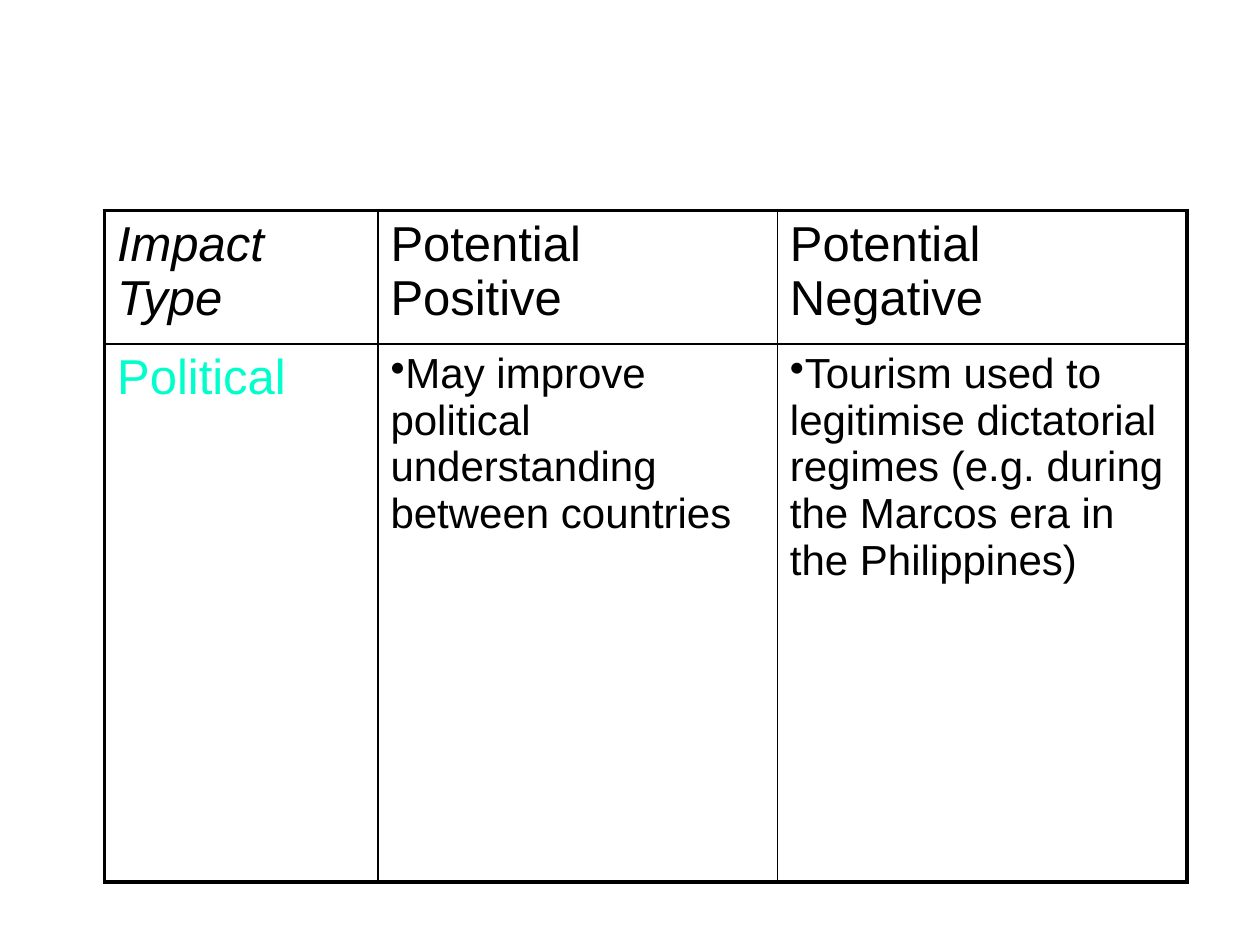
from lxml.etree import SubElement
from pptx import Presentation
from pptx.dml.color import RGBColor
from pptx.oxml.ns import qn
from pptx.util import Inches, Pt

HUES = {"ink": "000000", "aqua": "00FFCC"}
COLS = [2.17, 3.17, 3.25]
ROWS = [1.06, 4.27]
HEAD = {"size": Pt(28), "name": "Arial", "italic": False}
BODY = {**HEAD, "size": Pt(24)}
CELLS = [
    [
        ("Impact Type", {**HEAD, "italic": True}, "ink", False),
        ("Potential Positive", HEAD, "ink", False),
        ("Potential Negative", HEAD, "ink", False),
    ],
    [
        ("Political", HEAD, "aqua", False),
        ("May improve political understanding between countries",
         BODY, "ink", True),
        ("Tourism used to legitimise dictatorial regimes "
         "(e.g. during the Marcos era in the Philippines)",
         BODY, "ink", True),
    ],
]


def add_edge(cell, side, width):
    line = SubElement(cell._tc.get_or_add_tcPr(), qn(f"a:ln{side}"),
                      w=str(Pt(width)))
    fill = SubElement(line, qn("a:solidFill"))
    SubElement(fill, qn("a:srgbClr"), val=HUES["ink"])


def add_frame(cell, row, col):
    outer = {
        "L": col == 0,
        "R": col == len(COLS) - 1,
        "T": row == 0,
        "B": row == len(ROWS) - 1,
    }
    for side, edge in outer.items():
        add_edge(cell, side, 2.25 if edge else 1)


def add_bullet(para):
    props = para._p.get_or_add_pPr()
    props.set("marL", "0")
    props.set("indent", "0")
    SubElement(props, qn("a:buChar"), char="•")


def add_text(cell, text, style, hue, bullet):
    para = cell.text_frame.paragraphs[0]
    if bullet:
        add_bullet(para)
    run = para.add_run()
    run.text = text
    for key, value in style.items():
        setattr(run.font, key, value)
    run.font.color.rgb = RGBColor.from_string(HUES[hue])


def add_grid(slide):
    table = slide.shapes.add_table(
        len(ROWS), len(COLS), Inches(0.83), Inches(1.67),
        Inches(sum(COLS)), Inches(sum(ROWS))).table
    table.first_row = False
    table.horz_banding = False
    for col, width in zip(table.columns, COLS):
        col.width = Inches(width)
    for row, height in zip(table.rows, ROWS):
        row.height = Inches(height)
    for i, line in enumerate(CELLS):
        for j, item in enumerate(line):
            cell = table.cell(i, j)
            add_frame(cell, i, j)
            cell.fill.background()
            add_text(cell, *item)


def main():
    deck = Presentation()
    deck.slide_width = Inches(10)
    deck.slide_height = Inches(7.5)
    add_grid(deck.slides.add_slide(deck.slide_layouts[6]))
    deck.save("out.pptx")


if __name__ == "__main__":
    main()
